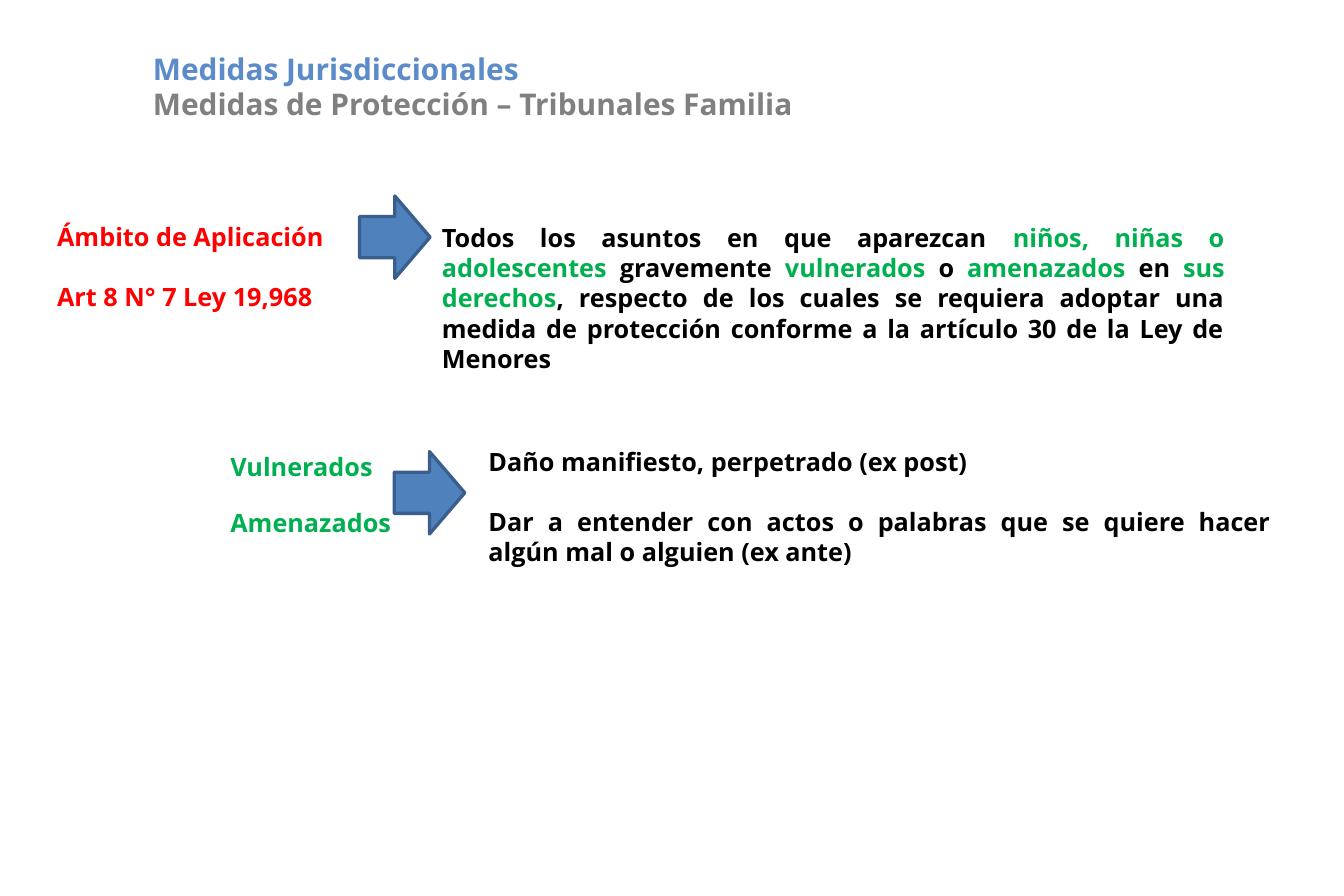
from dataclasses import dataclass

from pptx import Presentation
from pptx.dml.color import RGBColor
from pptx.enum.shapes import MSO_SHAPE
from pptx.enum.text import PP_ALIGN
from pptx.slide import Slide
from pptx.util import Emu, Pt

RIGHT_ARROW = MSO_SHAPE.RIGHT_ARROW
LEFT, JUSTIFY = PP_ALIGN.LEFT, PP_ALIGN.JUSTIFY

RED = RGBColor(0xFF, 0x00, 0x00)
GREEN = RGBColor(0x00, 0xB0, 0x50)
BLACK = RGBColor(0x00, 0x00, 0x00)
TITLE_BLUE = RGBColor(0x5B, 0x8B, 0xC8)
GRAY = RGBColor(0x80, 0x80, 0x80)
ARROW_FILL = RGBColor(0x4F, 0x81, 0xBD)
ARROW_LINE = RGBColor(0x3A, 0x5F, 0x8C)

EMU_PER_PX = 9144  # 100 px to the inch
ARROW_WIDTH, ARROW_HEIGHT = 59, 69
BODY_SIZE, TITLE_SIZE = 15.2, 18
LINE_RATIO = 1.2

Run = tuple[str, RGBColor]


@dataclass(frozen=True)
class TextBlock:
    left: int
    top: int
    width: int
    height: int
    paragraphs: list[list[Run]]
    align: PP_ALIGN = LEFT
    size: float = BODY_SIZE
    space_before: float = 0
    margins: tuple[int, int, int, int] = (10, 5, 10, 5)


@dataclass(frozen=True)
class Arrow:
    left: int
    top: int


SCOPE: list[Run] = [
    ("Todos los asuntos en que aparezcan ", BLACK),
    ("niños, niñas o adolescentes ", GREEN),
    ("gravemente ", BLACK),
    ("vulnerados", GREEN),
    (" o ", BLACK),
    ("amenazados", GREEN),
    (" en ", BLACK),
    ("sus derechos", GREEN),
    (", respecto de los cuales se requiera adoptar una medida de protección "
     "conforme a la artículo 30 de la Ley de Menores", BLACK),
]

TEXT_BLOCKS = [
    TextBlock(38, 180, 263, 87,
              [[("Ámbito de Aplicación", RED)], [("Art 8 N° 7 Ley 19,968", RED)]],
              space_before=BODY_SIZE * LINE_RATIO),
    TextBlock(360, 181, 675, 138, [SCOPE], JUSTIFY),
    TextBlock(183, 373, 263, 36, [[("Vulnerados", GREEN)]]),
    TextBlock(399, 369, 675, 36,
              [[("Daño manifiesto, perpetrado (ex post)", BLACK)]], JUSTIFY),
    TextBlock(183, 420, 263, 36, [[("Amenazados", GREEN)]]),
    TextBlock(399, 419, 675, 61,
              [[("Dar a entender con actos o palabras que se quiere hacer "
                 "algún mal o alguien (ex ante)", BLACK)]], JUSTIFY),
    TextBlock(121, 42, 575, 61,
              [[("Medidas Jurisdiccionales", TITLE_BLUE)],
               [("Medidas de Protección – Tribunales Familia", GRAY)]],
              size=TITLE_SIZE, margins=(7, 0, 0, 0)),
]

ARROWS = [Arrow(301, 164), Arrow(330, 378)]


def px(value: int) -> Emu:
    return Emu(value * EMU_PER_PX)


def add_text(slide: Slide, block: TextBlock) -> None:
    box = slide.shapes.add_textbox(
        px(block.left), px(block.top), px(block.width), px(block.height))
    frame = box.text_frame
    frame.word_wrap = True
    for side, margin in zip(("left", "top", "right", "bottom"), block.margins):
        setattr(frame, f"margin_{side}", px(margin))
    font_format = {"name": "Open Sans", "size": Pt(block.size), "bold": True}
    for index, runs in enumerate(block.paragraphs):
        paragraph = frame.add_paragraph() if index else frame.paragraphs[0]
        paragraph.alignment = block.align
        paragraph.line_spacing = Pt(block.size * LINE_RATIO)
        if index:
            paragraph.space_before = Pt(block.space_before)
        for text, color in runs:
            run = paragraph.add_run()
            run.text = text
            for name, value in font_format.items():
                setattr(run.font, name, value)
            run.font.color.rgb = color


def add_arrow(slide: Slide, arrow: Arrow) -> None:
    shape = slide.shapes.add_shape(
        RIGHT_ARROW, px(arrow.left), px(arrow.top), px(ARROW_WIDTH), px(ARROW_HEIGHT))
    shape.shadow.inherit = False
    shape.fill.solid()
    shape.fill.fore_color.rgb = ARROW_FILL
    shape.line.color.rgb = ARROW_LINE
    shape.line.width = Pt(2)


def main() -> None:
    presentation = Presentation()
    presentation.slide_width, presentation.slide_height = px(1125), px(750)
    slide = presentation.slides.add_slide(presentation.slide_layouts[6])
    for arrow in ARROWS:
        add_arrow(slide, arrow)
    for block in TEXT_BLOCKS:
        add_text(slide, block)
    presentation.save("out.pptx")


if __name__ == "__main__":
    main()
